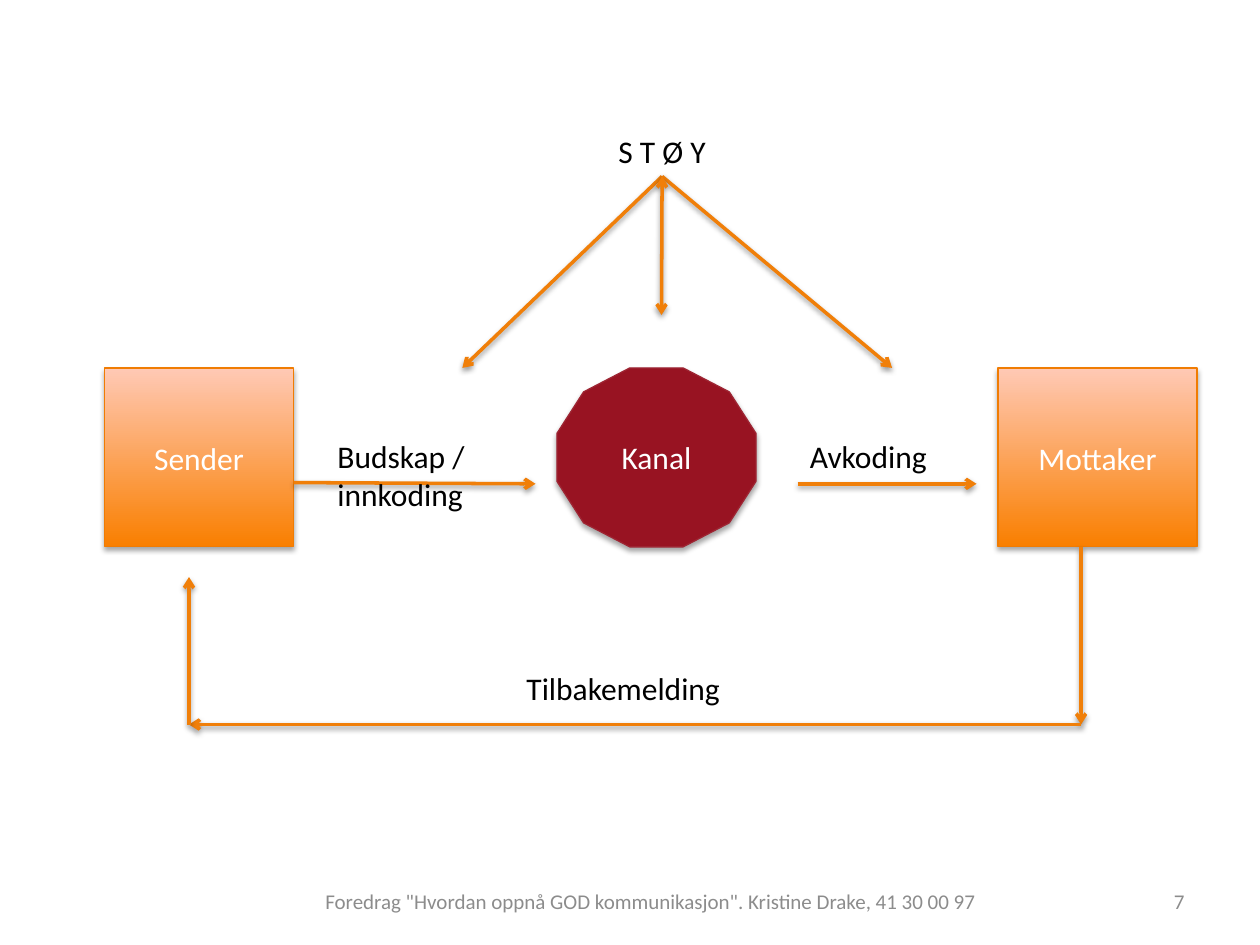
from pptx import Presentation
from pptx.dml.color import RGBColor
from pptx.enum.shapes import MSO_CONNECTOR as Connector, MSO_SHAPE as Shape
from pptx.enum.text import MSO_ANCHOR as Anchor, MSO_AUTO_SIZE as AutoSize, PP_ALIGN as Align
from pptx.oxml import parse_xml
from pptx.oxml.ns import nsdecls
from pptx.util import Inches, Pt

FONT = "Calibri"
BLACK = RGBColor(0x00, 0x00, 0x00)
WHITE = RGBColor(0xFF, 0xFF, 0xFF)
GRAY = RGBColor(0x8C, 0x8C, 0x8C)
ORANGE = RGBColor(0xF9, 0x7F, 0x00)
PEACH = RGBColor(0xFF, 0xC9, 0xB5)
BOX_LINE = RGBColor(0xF0, 0x7C, 0x03)
ARROW = RGBColor(0xF0, 0x7F, 0x09)
RED = RGBColor(0x98, 0x13, 0x22)
RED_LINE = RGBColor(0x9E, 0x25, 0x33)
BOX_TOP, BOX_HEIGHT = 2.92, 1.42
FEEDBACK_LEFT, FEEDBACK_RIGHT, FEEDBACK_Y = 1.5, 8.58, 5.75


def write_text(shape, text, size, color, align):
    """Put one formatted paragraph in a shape."""
    shape.text_frame.word_wrap = True
    paragraph = shape.text_frame.paragraphs[0]
    paragraph.text = text
    paragraph.alignment = align
    paragraph.font.name = FONT
    paragraph.font.size = Pt(size)
    paragraph.font.color.rgb = color


def add_shadow(shape, opacity, distance):
    """Append a soft downward shadow to a shape or connector."""
    shape._element.spPr.append(parse_xml(
        f'<a:effectLst {nsdecls("a")}><a:outerShdw blurRad="{Pt(3.1)}" '
        f'dist="{Pt(distance)}" dir="5400000" rotWithShape="0"><a:srgbClr val="000000">'
        f'<a:alpha val="{opacity * 1000}"/></a:srgbClr></a:outerShdw></a:effectLst>'))


def add_label(slide, text, left, top, width, height=0.4, align=Align.LEFT):
    """Add a black text label and return it."""
    label = slide.shapes.add_textbox(Inches(left), Inches(top), Inches(width), Inches(height))
    write_text(label, text, 18, BLACK, align)
    label.text_frame.auto_size = AutoSize.SHAPE_TO_FIT_TEXT
    return label


def add_footer(slide, text, left, width, align):
    """Add a small gray text at the foot of the slide."""
    footer = slide.shapes.add_textbox(Inches(left), Inches(6.95), Inches(width), Inches(0.4))
    write_text(footer, text, 12, GRAY, align)
    footer.text_frame.vertical_anchor = Anchor.MIDDLE


def add_node(slide, kind, text, left, width, line_color):
    """Add one station of the communication chain and return it."""
    node = slide.shapes.add_shape(
        kind, Inches(left), Inches(BOX_TOP), Inches(width), Inches(BOX_HEIGHT))
    node.line.color.rgb = line_color
    node.line.width = Pt(0.75)
    write_text(node, text, 18, WHITE, Align.CENTER)
    node.text_frame.vertical_anchor = Anchor.MIDDLE
    return node


def add_person(slide, text, left, width):
    """Add a rectangle with an orange gradient for a sender or receiver."""
    person = add_node(slide, Shape.RECTANGLE, text, left, width, BOX_LINE)
    person.fill.gradient()
    person.fill.gradient_angle = 90
    for stop, color in zip(person.fill.gradient_stops, (ORANGE, PEACH)):
        stop.color.rgb = color
    add_shadow(person, 35, 1.8)


def add_channel(slide):
    """Add the red dodecagon for the channel."""
    channel = add_node(slide, Shape.DODECAGON, "Kanal", 4.42, 1.58, RED_LINE)
    channel.fill.solid()
    channel.fill.fore_color.rgb = RED
    add_shadow(channel, 35, 1.8)


def add_arrow(slide, start, end, ends=("tailEnd",)):
    """Add an orange arrow and return it."""
    arrow = slide.shapes.add_connector(
        Connector.STRAIGHT, *(Inches(value) for value in (*start, *end)))
    arrow.line.color.rgb = ARROW
    arrow.line.width = Pt(2)
    for name in ends:
        arrow.line._get_or_add_ln().append(
            parse_xml(f'<a:{name} {nsdecls("a")} type="arrow"/>'))
    add_shadow(arrow, 38, 1.6)
    return arrow


def add_noise(slide):
    """Add the noise label with its three arrows."""
    noise = add_label(slide, "S T Ø Y", 3.67, 1, 3.17, align=Align.CENTER)
    for end, ends in (((3.67, BOX_TOP), ("tailEnd",)),
                      ((7.08, BOX_TOP), ("tailEnd",)),
                      ((5.25, 2.5), ("headEnd", "tailEnd"))):
        add_arrow(slide, (5.25, 1.4), end, ends).begin_connect(noise, 2)


def main():
    """Build the communication model slide."""
    presentation = Presentation()
    presentation.slide_width, presentation.slide_height = Inches(10), Inches(7.5)
    slide = presentation.slides.add_slide(presentation.slide_layouts[6])

    add_footer(slide, 'Foredrag "Hvordan oppnå GOD kommunikasjon". Kristine Drake, 41 30 00 97',
               2.33, 5.67, Align.CENTER)
    add_footer(slide, "7", 8.58, 0.92, Align.RIGHT)

    add_person(slide, "Sender", 0.83, 1.5)
    add_person(slide, "Mottaker", 7.92, 1.58)
    add_channel(slide)

    add_arrow(slide, (2.33, 3.83), (4.25, 3.84))
    add_arrow(slide, (6.33, 3.84), (7.75, 3.84))
    feedback = ((FEEDBACK_RIGHT, BOX_TOP + BOX_HEIGHT), (FEEDBACK_RIGHT, FEEDBACK_Y),
                (FEEDBACK_LEFT, FEEDBACK_Y), (FEEDBACK_LEFT, 4.58))
    for start, end in zip(feedback, feedback[1:]):
        add_arrow(slide, start, end)

    add_label(slide, "Tilbakemelding", 4.08, 5.26, 2.17)
    add_noise(slide)
    add_label(slide, "Budskap / innkoding", 2.58, 3.42, 1.5, 0.71)
    add_label(slide, "Avkoding", 6.33, 3.42, 1.5)
    presentation.save("out.pptx")


if __name__ == "__main__":
    main()
